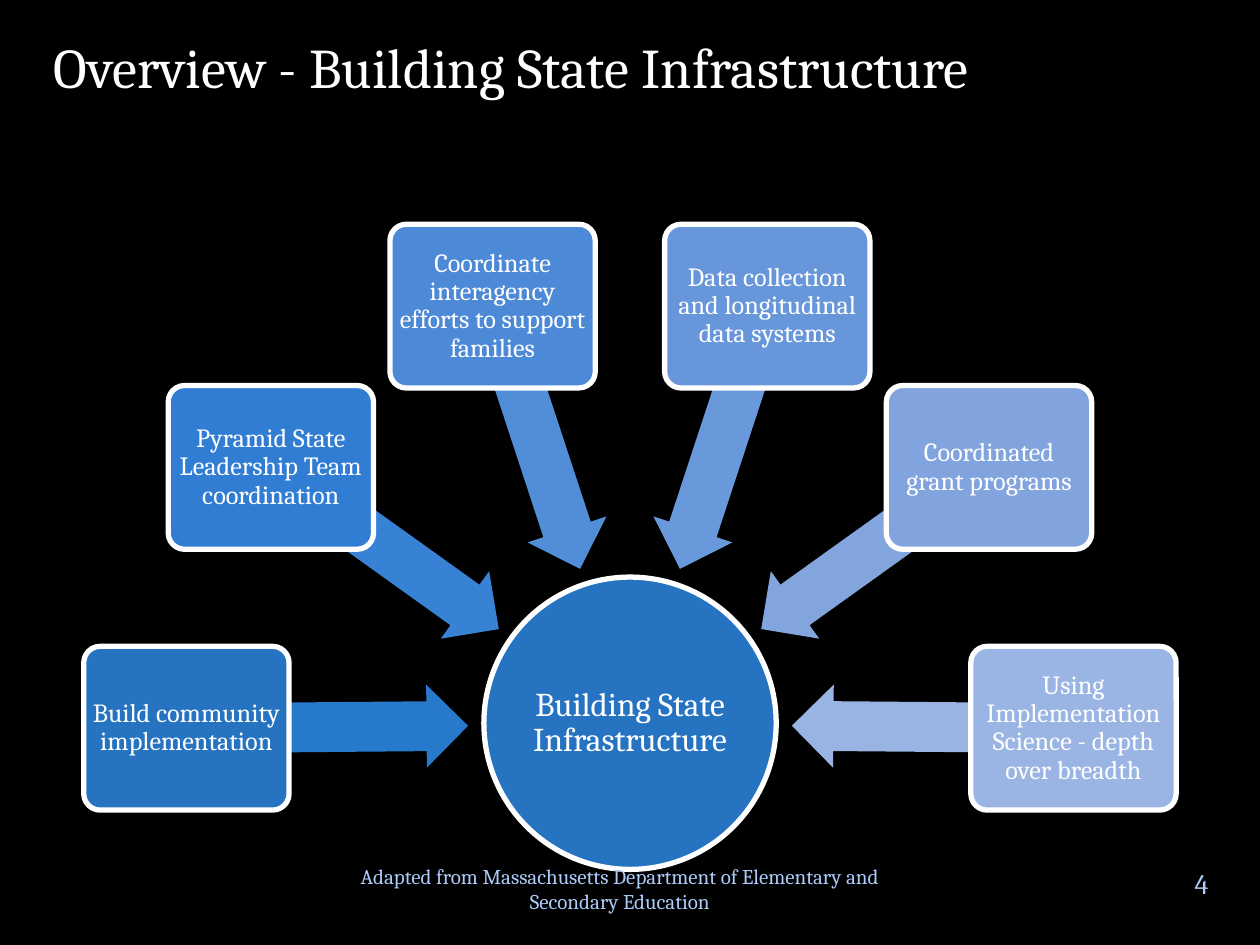
from pptx import Presentation
from pptx import util as u
from pptx.dml.color import RGBColor
from pptx.enum import shapes, text

COLORS = {"background": "000000", "white": "FFFFFF", "footer": "ACCBF9", "hub": "2573C1"}
AXIS = 5.0  # the fan is symmetric about this vertical line
BOX_SIZE = (1.63, 1.3)
ARROW_HEIGHT = 0.66

# Left half of the fan: box centre, arrow centre, arrow length, arrow rotation
POSITIONS = [
    ((1.48, 5.78), (2.6, 5.77), 2.23, 179.5),
    ((2.15, 3.71), (3.06, 4.35), 2.21, 215.6),
    ((3.91, 2.43), (4.26, 3.47), 2.2, 251.8),
]

# Topic, box colour, arrow colour, from left to right
TOPICS = [
    ("Build community implementation", "2573C1", "2779CB"),
    ("Pyramid State Leadership Team coordination", "317DD4", "3882D6"),
    ("Coordinate interagency efforts to support families", "4C89D6", "528DD8"),
    ("Data collection and longitudinal data systems", "6796DA", "6A99DB"),
    ("Coordinated grant programs", "81A4DE", "82A5DE"),
    ("Using Implementation Science - depth over breadth", "9AB4E3", "99B3E3"),
]


def rgb(color):
    return RGBColor.from_string(COLORS.get(color, color))


def mirror(position):
    """Reflect one box and its arrow across the axis."""
    (box_x, box_y), (arrow_x, arrow_y), length, rotation = position
    return ((2 * AXIS - box_x, box_y), (2 * AXIS - arrow_x, arrow_y),
            length, (540 - rotation) % 360)


def write(frame, words, size, color="white", align=text.PP_ALIGN.CENTER,
          anchor=text.MSO_ANCHOR.MIDDLE, inset=None, spacing=None):
    frame.word_wrap = True
    frame.vertical_anchor = anchor
    if inset is not None:
        frame.margin_left = frame.margin_right = u.Inches(inset)
        frame.margin_top = frame.margin_bottom = u.Inches(inset)
    para = frame.paragraphs[0]
    para.alignment = align
    if spacing:
        para.line_spacing = spacing
    span = para.add_run()
    span.text = words
    span.font.name = "Cambria"
    span.font.size = u.Pt(size)
    span.font.color.rgb = rgb(color)


class Painter:
    """Holds the current slide and its shape style."""

    def __init__(self, page, outline="white", outline_width=3):
        self.page = page
        self.outline = outline
        self.outline_width = outline_width

    def background(self, color):
        fill = self.page.background.fill
        fill.solid()
        fill.fore_color.rgb = rgb(color)

    def shape(self, kind, center, size, color):
        left, top = (c - s / 2 for c, s in zip(center, size))
        shape = self.page.shapes.add_shape(
            kind, *(u.Inches(v) for v in (left, top, *size)))
        shape.shadow.inherit = False
        shape.fill.solid()
        shape.fill.fore_color.rgb = rgb(color)
        return shape

    def node(self, kind, center, size, color, words, font_size, inset):
        """Add an outlined shape with centred text."""
        node = self.shape(kind, center, size, color)
        node.line.color.rgb = rgb(self.outline)
        node.line.width = u.Pt(self.outline_width)
        write(node.text_frame, words, font_size, inset=inset, spacing=0.9)
        return node

    def hub(self, center, diameter, words):
        self.node(shapes.MSO_SHAPE.OVAL, center, (diameter, diameter), "hub",
                  words, 19, 0.01)

    def topic(self, center, color, words):
        box = self.node(shapes.MSO_SHAPE.ROUNDED_RECTANGLE, center, BOX_SIZE,
                        color, words, 15, 0.03)
        box.adjustments[0] = 0.1

    def arrow(self, center, length, rotation, color):
        arrow = self.shape(shapes.MSO_SHAPE.LEFT_ARROW, center,
                           (length, ARROW_HEIGHT), color)
        arrow.adjustments[0] = 0.6
        arrow.adjustments[1] = 0.5
        arrow.rotation = rotation
        arrow.line.fill.background()

    def label(self, place, words, size, **style):
        box = self.page.shapes.add_textbox(*(u.Inches(v) for v in place))
        write(box.text_frame, words, size, **style)


def main():
    deck = Presentation()
    deck.slide_width, deck.slide_height = u.Inches(10), u.Inches(7.5)
    painter = Painter(deck.slides.add_slide(deck.slide_layouts[6]))
    painter.background("background")

    painter.hub((AXIS, 5.74), 2.32, "Building State Infrastructure")
    positions = POSITIONS + [mirror(p) for p in reversed(POSITIONS)]
    for position, (words, box_color, arrow_color) in zip(positions, TOPICS):
        box_center, arrow_center, length, rotation = position
        painter.arrow(arrow_center, length, rotation, arrow_color)
        painter.topic(box_center, box_color, words)

    painter.label((9.2, 6.76, 0.67, 0.5), "4", 16, color="footer", inset=0)
    painter.label((2.67, 6.78, 4.5, 0.55),
                  "Adapted from Massachusetts Department of Elementary and "
                  "Secondary Education", 12, color="footer")
    painter.label((0.33, 0.21, 9.33, 0.94), "Overview - Building State Infrastructure",
                  32, align=text.PP_ALIGN.LEFT, anchor=text.MSO_ANCHOR.TOP)
    deck.save("out.pptx")


if __name__ == "__main__":
    main()
